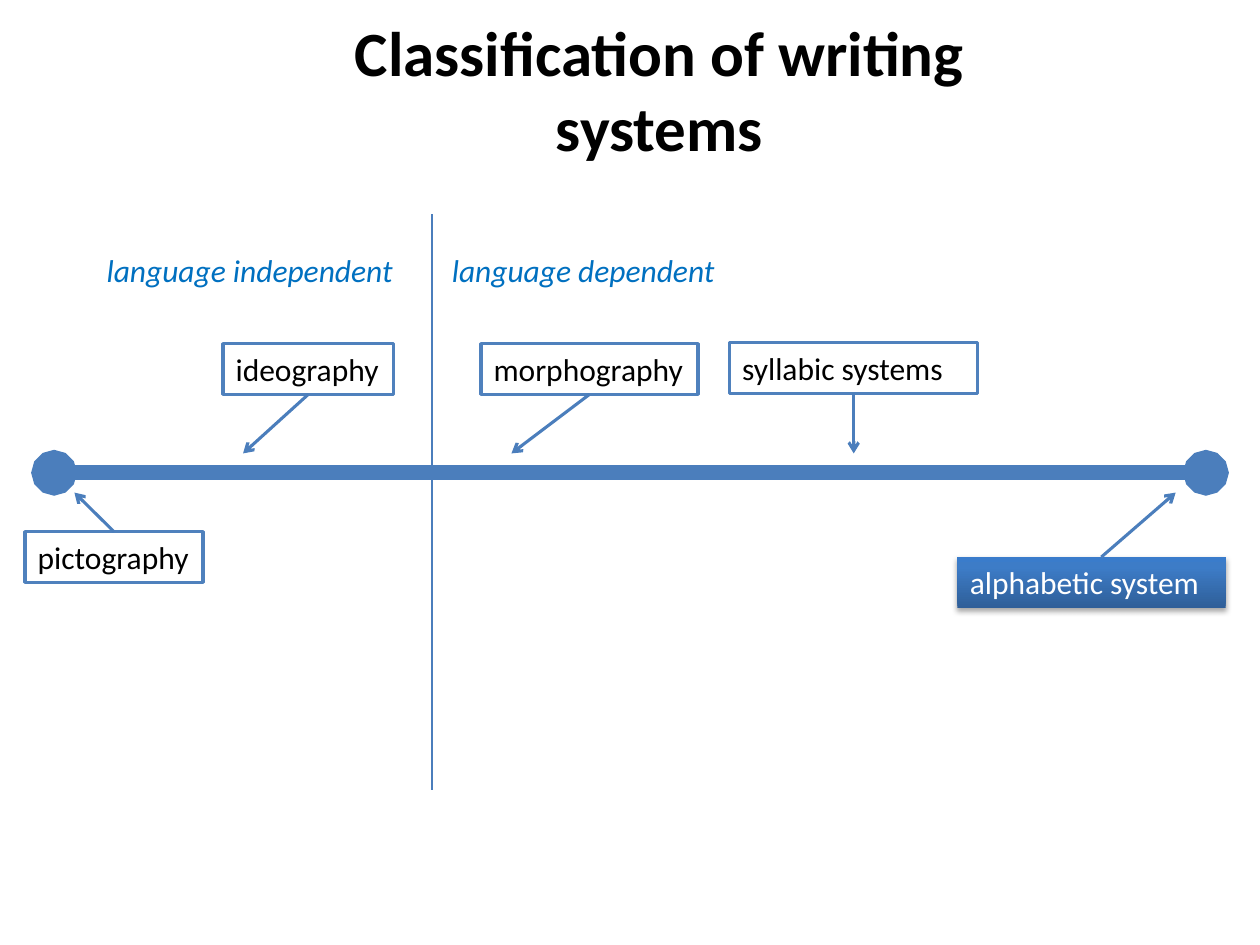
from dataclasses import dataclass

from lxml import etree
from pptx import Presentation
from pptx import util as u
from pptx.dml.color import RGBColor
from pptx.enum import shapes, text
from pptx.oxml import ns


@dataclass(frozen=True)
class Theme:
    font: str = "Calibri"
    black: str = "000000"
    white: str = "FFFFFF"
    edge: str = "4F81BD"
    line: str = "4B7EBC"
    note: str = "0070C0"
    fade: tuple = ((0, "2F5F99"), (80, "3D7CC7"), (100, "3A7CCB"))
    head: int = 36
    body: int = 18
    axis: float = 8.75
    arrow: float = 1.75
    split: float = 1.25
    frame: float = 2


THEME = Theme()
HIGH = 1.02
AXIS = 9.53
ABOVE = 9.14
BELOW = 9.93


def rgb(code):
    return RGBColor.from_string(code)


def sub(node, tag, **attrs):
    return etree.SubElement(node, ns.qn(tag), attrs)


def write(shape, words, size, color, bold=False, italic=False, wrap=True):
    frame = shape.text_frame
    frame.text = words
    frame.word_wrap = wrap
    para = frame.paragraphs[0]
    para.alignment = text.PP_ALIGN.LEFT
    font = para.runs[0].font
    font.name = THEME.font
    font.size = u.Pt(size)
    font.bold = bold
    font.italic = italic
    font.color.rgb = rgb(color)


def add_title(slide, words):
    box = slide.shapes.add_textbox(u.Cm(6.88), u.Cm(0.2), u.Cm(12.83), u.Cm(3.18))
    write(box, words, THEME.head, THEME.black, bold=True)
    box.text_frame.vertical_anchor = text.MSO_ANCHOR.MIDDLE
    box.text_frame.paragraphs[0].alignment = text.PP_ALIGN.CENTER


def add_note(slide, words, left, width):
    box = slide.shapes.add_textbox(u.Cm(left), u.Cm(4.93), u.Cm(width), u.Cm(HIGH))
    write(box, words, THEME.body, THEME.note, italic=True, wrap=False)


def add_box(slide, words, left, top, width, color=THEME.black, wrap=False):
    box = slide.shapes.add_shape(
        shapes.MSO_SHAPE.RECTANGLE, u.Cm(left), u.Cm(top), u.Cm(width), u.Cm(HIGH))
    box.shadow.inherit = False
    box.fill.solid()
    box.fill.fore_color.rgb = rgb(THEME.white)
    box.line.color.rgb = rgb(THEME.edge)
    box.line.width = u.Pt(THEME.frame)
    write(box, words, THEME.body, color, wrap=wrap)
    return box


def shade(box):
    box.line.fill.background()
    box.fill.gradient()
    box.fill.gradient_angle = 90
    props = box.element.spPr
    stops = props.find(ns.qn("a:gradFill")).find(ns.qn("a:gsLst"))
    for stop in list(stops):
        stops.remove(stop)
    for place, code in THEME.fade:
        stop = sub(stops, "a:gs", pos=str(place * 1000))
        sub(stop, "a:srgbClr", val=code)
    cast = sub(props.find(ns.qn("a:effectLst")), "a:outerShdw",
               blurRad=str(u.Pt(3.1)), dist=str(u.Pt(1.8)),
               dir="5400000", rotWithShape="0")
    tint = sub(cast, "a:srgbClr", val=THEME.black)
    sub(tint, "a:alpha", val="35000")


def add_line(slide, start, end, width, head=None, tail=None):
    line = slide.shapes.add_connector(
        shapes.MSO_CONNECTOR.STRAIGHT, *[u.Cm(n) for n in (*start, *end)])
    line.line.color.rgb = rgb(THEME.line)
    line.line.width = u.Pt(width)
    props = line.element.spPr
    stroke = props.find(ns.qn("a:ln"))
    for tag, kind in (("a:headEnd", head), ("a:tailEnd", tail)):
        if kind:
            sub(stroke, tag, type=kind)
    sub(props, "a:effectLst")
    return line


def add_arrow(slide, start, end):
    return add_line(slide, start, end, THEME.arrow, tail="arrow")


def main():
    deck = Presentation()
    deck.slide_width = u.Cm(25.4)
    deck.slide_height = u.Cm(19.05)
    slide = deck.slides.add_slide(deck.slide_layouts[6])

    add_line(slide, (1.09, AXIS), (24.31, AXIS), THEME.axis, "oval", "oval")
    systems = (
        ("pictography", 0.51, 10.72, 3.58, False, 0, (1.5, BELOW)),
        ("ideography", 4.5, 6.93, 3.43, False, 2, (4.9, ABOVE)),
        ("morphography", 9.7, 6.93, 4.37, False, 2, (10.31, ABOVE)),
        ("syllabic systems", 14.71, 6.91, 5, True, 2, (17.21, ABOVE)),
    )
    for words, left, top, width, wrap, side, tip in systems:
        box = add_box(slide, words, left, top, width, wrap=wrap)
        arrow = add_arrow(slide, (left + width / 2, top), tip)
        arrow.begin_connect(box, side)

    add_line(slide, (8.71, 4.32), (8.71, 15.93), THEME.split)
    add_note(slide, "language independent", 1.9, 6.38)
    add_note(slide, "language dependent", 8.86, 6.02)
    add_title(slide, "Classification of writing systems")

    shade(add_box(slide, "alphabetic system", 19.3, 11.23, 5.41, THEME.white, True))
    add_arrow(slide, (22.2, 11.23), (23.7, BELOW))
    deck.save("out.pptx")


if __name__ == "__main__":
    main()
